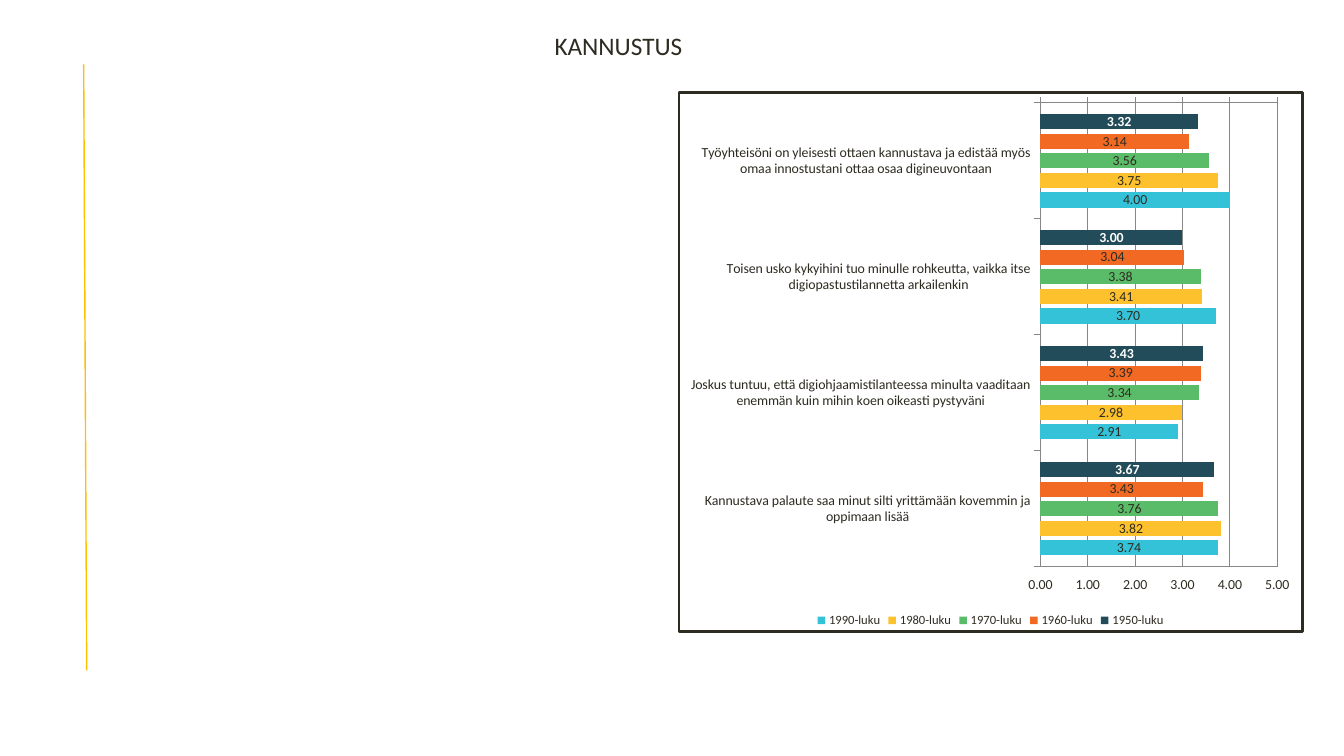
from dataclasses import dataclass

from lxml.etree import SubElement
from pptx import Presentation
from pptx.chart.chart import Chart
from pptx.chart.data import CategoryChartData
from pptx.dml.color import RGBColor
from pptx.enum.chart import (XL_CHART_TYPE, XL_LABEL_POSITION, XL_LEGEND_POSITION,
                             XL_TICK_LABEL_POSITION, XL_TICK_MARK)
from pptx.enum.shapes import MSO_CONNECTOR
from pptx.enum.text import MSO_ANCHOR, MSO_AUTO_SIZE, PP_ALIGN
from pptx.oxml import parse_xml
from pptx.oxml.ns import nsdecls, qn
from pptx.slide import Slide
from pptx.util import Emu, Pt

DARK = RGBColor(0x2E, 0x2B, 0x21)
WHITE = RGBColor(0xFF, 0xFF, 0xFF)
GRAY = RGBColor(0x87, 0x87, 0x87)
GOLD = RGBColor(0xFF, 0xC0, 0x00)
NAVY = RGBColor(0x23, 0x4C, 0x5A)
ORANGE = RGBColor(0xF2, 0x69, 0x23)
GREEN = RGBColor(0x5A, 0xBC, 0x68)
YELLOW = RGBColor(0xFD, 0xC1, 0x2E)
CYAN = RGBColor(0x34, 0xC2, 0xD8)
FONT = "Calibri"
NUMBER_FORMAT = "0.00"


@dataclass
class Decade:
    name: str
    values: tuple[float, ...]
    color: RGBColor
    label_color: RGBColor = DARK
    bold: bool = False


STATEMENTS = (
    "Työyhteisöni on yleisesti ottaen kannustava ja edistää myös omaa innostustani ottaa osaa digineuvontaan",
    "Toisen usko kykyihini tuo minulle rohkeutta, vaikka itse digiopastustilannetta arkailenkin",
    "Joskus tuntuu, että digiohjaamistilanteessa minulta vaaditaan enemmän kuin mihin koen oikeasti pystyväni",
    "Kannustava palaute saa minut silti yrittämään kovemmin ja oppimaan lisää",
)
DECADES = (
    Decade("1950-luku", (3.32, 3, 3.43, 3.67), NAVY, WHITE, True),
    Decade("1960-luku", (3.14, 3.04, 3.39, 3.43), ORANGE),
    Decade("1970-luku", (3.56, 3.38, 3.34, 3.76), GREEN),
    Decade("1980-luku", (3.75, 3.41, 2.98, 3.82), YELLOW),
    Decade("1990-luku", (4, 3.7, 2.91, 3.74), CYAN),
)


def px(n: int) -> Emu:
    """Length of n px, at 100 px to the inch."""
    return Emu(n * 9144)


def set_font(font, size: int, color: RGBColor = DARK, bold: bool = False) -> None:
    font.name, font.size, font.bold = FONT, Pt(size), bold
    font.color.rgb = color


def add_title(s: Slide, text: str, *, left: int, top: int, width: int, height: int,
              size: int) -> None:
    sp = s.shapes.title
    sp.left, sp.top, sp.width, sp.height = px(left), px(top), px(width), px(height)
    tf = sp.text_frame
    tf.word_wrap = False
    tf.auto_size = MSO_AUTO_SIZE.SHAPE_TO_FIT_TEXT
    tf.vertical_anchor = MSO_ANCHOR.TOP
    tf.margin_left = tf.margin_right = px(13)
    tf.margin_top = tf.margin_bottom = px(7)
    p = tf.paragraphs[0]
    p.alignment = PP_ALIGN.LEFT
    r = p.add_run()
    r.text = text
    set_font(r.font, size)


def add_side_line(s: Slide) -> None:
    line = s.shapes.add_connector(MSO_CONNECTOR.STRAIGHT, px(86), px(665), px(83), px(64))
    line.line.color.rgb = GOLD
    line.line.width = Pt(1)
    SubElement(line.element.spPr, qn("a:effectLst"))


def area_format(border: RGBColor, width: float):
    """White area with a solid border, as a chart spPr element."""
    return parse_xml(
        f'<c:spPr {nsdecls("c", "a")}><a:solidFill><a:srgbClr val="{WHITE}"/></a:solidFill>'
        f'<a:ln w="{Pt(width)}"><a:solidFill><a:srgbClr val="{border}"/></a:solidFill></a:ln></c:spPr>')


def format_areas(chart: Chart, **plot_box: float) -> None:
    """Frame the chart and place its plot at x, y, w, h as shares of the chart."""
    box = "".join(f'<c:{k} val="{v}"/>' for k, v in plot_box.items())
    layout = parse_xml(
        f'<c:layout {nsdecls("c")}><c:manualLayout><c:layoutTarget val="inner"/>'
        f'<c:xMode val="edge"/><c:yMode val="edge"/>{box}</c:manualLayout></c:layout>')
    root = chart.element.find(qn("c:chart"))
    plot_area = root.find(qn("c:plotArea"))
    for old in plot_area.findall(qn("c:layout")):
        plot_area.remove(old)
    plot_area.insert(0, layout)
    plot_area.append(area_format(GRAY, 0.75))
    root.addnext(area_format(DARK, 2))


def format_axes(chart: Chart) -> None:
    cat, val = chart.category_axis, chart.value_axis
    cat.reverse_order = True
    val.minimum_scale, val.maximum_scale, val.major_unit = 0, 5, 1
    val.tick_label_position = XL_TICK_LABEL_POSITION.HIGH
    val.tick_labels.number_format = NUMBER_FORMAT
    val.tick_labels.number_format_is_linked = False
    val.has_major_gridlines = True
    for line in (cat.format.line, val.format.line, val.major_gridlines.format.line):
        line.color.rgb = GRAY
        line.width = Pt(0.75)
    for axis in (cat, val):
        axis.major_tick_mark = XL_TICK_MARK.OUTSIDE
        axis.minor_tick_mark = XL_TICK_MARK.NONE
        set_font(axis.tick_labels.font, 10)


def add_decade_chart(s: Slide) -> None:
    data = CategoryChartData(number_format=NUMBER_FORMAT)
    data.categories = STATEMENTS
    for decade in DECADES:
        data.add_series(decade.name, decade.values)
    chart = s.shapes.add_chart(XL_CHART_TYPE.BAR_CLUSTERED, px(672), px(90),
                               px(621), px(538), data).chart
    chart.has_title = False
    set_font(chart.font, 10)
    format_areas(chart, x=0.58, y=0.02, w=0.38, h=0.86)
    format_axes(chart)
    chart.has_legend = True
    chart.legend.position = XL_LEGEND_POSITION.BOTTOM
    chart.legend.include_in_layout = False
    set_font(chart.legend.font, 9)

    plot = chart.plots[0]
    plot.gap_width, plot.overlap, plot.vary_by_categories = 150, -30, False
    for series, decade in zip(plot.series, DECADES):
        series.format.fill.solid()
        series.format.fill.fore_color.rgb = decade.color
        labels = series.data_labels
        labels.show_value = True
        labels.position = XL_LABEL_POSITION.CENTER
        labels.number_format = NUMBER_FORMAT
        labels.number_format_is_linked = False
        set_font(labels.font, 10, decade.label_color, decade.bold)


def main() -> None:
    prs = Presentation()
    prs.slide_width, prs.slide_height = px(1333), px(750)
    s = prs.slides.add_slide(prs.slide_layouts.get_by_name("Title Only"))
    add_side_line(s)
    add_decade_chart(s)
    add_title(s, "KANNUSTUS", left=537, top=23, width=155, height=44, size=18)
    prs.save("out.pptx")


if __name__ == "__main__":
    main()
